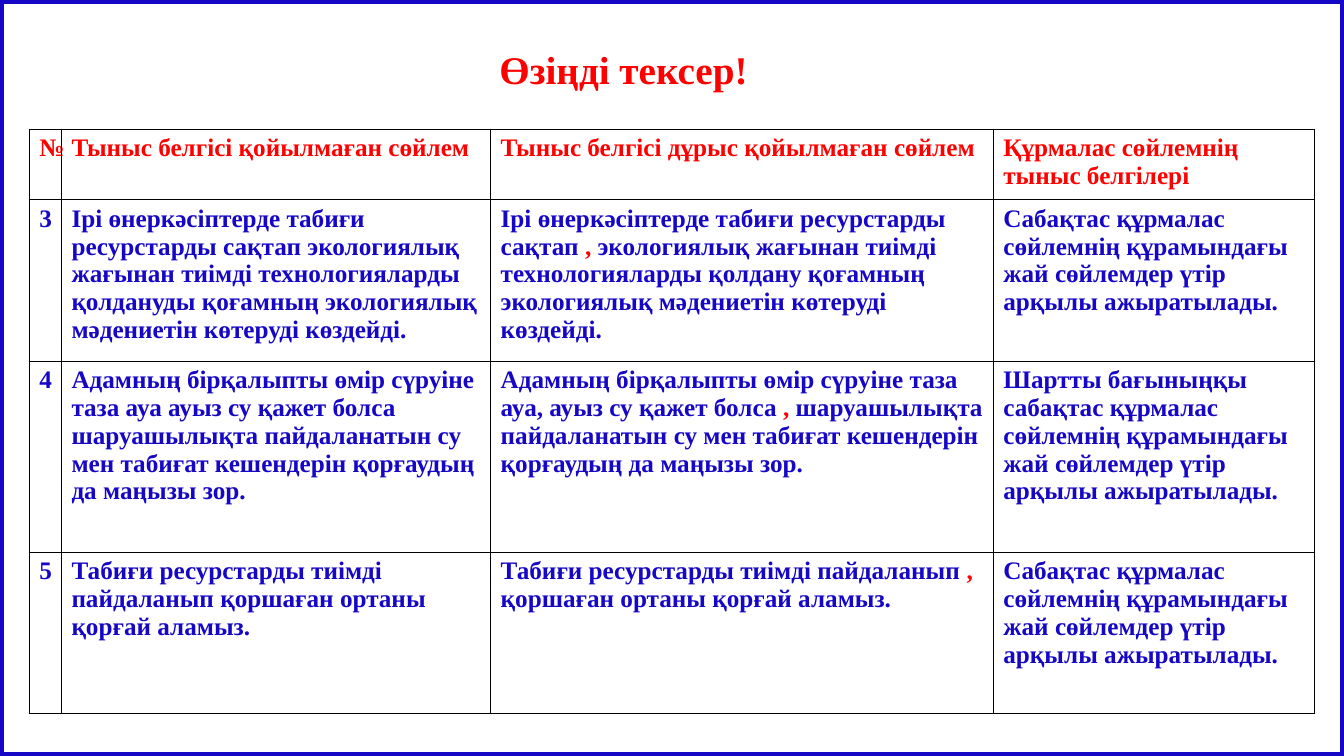
"""Builds the self-check slide with a table of punctuated sentences."""
from lxml.etree import SubElement
from pptx import Presentation
from pptx.dml.color import RGBColor
from pptx.enum.shapes import MSO_SHAPE as Shape
from pptx.enum.text import MSO_AUTO_SIZE as AutoSize, PP_ALIGN as Align
from pptx.oxml.ns import qn
from pptx.util import Inches, Pt

RED, BLUE, WHITE, BLACK = "FF0000", "1507C5", "FFFFFF", "000000"
TITLE = "Өзіңді тексер!"
COMPLEX_RULE = "Сабақтас құрмалас сөйлемнің құрамындағы жай сөйлемдер үтір арқылы ажыратылады."
HEADER = [
    "№",
    "Тыныс белгісі қойылмаған сөйлем",
    "Тыныс белгісі дұрыс қойылмаған сөйлем",
    "Құрмалас сөйлемнің тыныс белгілері",
]
SENTENCES = [
    [
        "3",
        "Ірі өнеркәсіптерде табиғи ресурстарды сақтап экологиялық жағынан тиімді "
        "технологияларды қолдануды қоғамның экологиялық мәдениетін көтеруді көздейді.",
        ("Ірі өнеркәсіптерде табиғи ресурстарды сақтап ", ", ",
         "экологиялық жағынан тиімді технологияларды қолдану қоғамның "
         "экологиялық мәдениетін көтеруді көздейді."),
        COMPLEX_RULE,
    ],
    [
        "4",
        "Адамның бірқалыпты өмір сүруіне таза ауа ауыз су қажет болса шаруашылықта "
        "пайдаланатын су мен табиғат кешендерін қорғаудың да маңызы зор.",
        ("Адамның бірқалыпты өмір сүруіне таза ауа, ауыз су қажет болса ", ", ",
         "шаруашылықта пайдаланатын су мен табиғат кешендерін қорғаудың да маңызы зор."),
        "Шартты бағыныңқы сабақтас құрмалас сөйлемнің құрамындағы жай сөйлемдер "
        "үтір арқылы ажыратылады.",
    ],
    [
        "5",
        "Табиғи ресурстарды тиімді пайдаланып қоршаған ортаны қорғай аламыз.",
        ("Табиғи ресурстарды тиімді пайдаланып ", ", ", "қоршаған ортаны қорғай аламыз."),
        COMPLEX_RULE,
    ],
]
COLUMN_WIDTHS = [0.32, 4.26, 4.99, 3.19]
ROW_HEIGHTS = [0.7, 1.6, 1.9, 1.6]
SLIDE_SIZE = (13.34, 7.5)


def color(value):
    return RGBColor.from_string(value)


def add_span(para, text, size, ink):
    span = para.add_run()
    span.text = text
    formats = {"name": "Times New Roman", "size": Pt(size), "bold": True}
    for name, value in formats.items():
        setattr(span.font, name, value)
    span.font.color.rgb = color(ink)


def add_borders(cell):
    properties = cell._tc.get_or_add_tcPr()
    for side in ("a:lnL", "a:lnR", "a:lnT", "a:lnB"):
        line = SubElement(properties, qn(side), w=str(Pt(0.45)))
        fill = SubElement(line, qn("a:solidFill"))
        SubElement(fill, qn("a:srgbClr"), val=BLACK)


def add_frame(page):
    frame = page.shapes.add_shape(Shape.RECTANGLE, 0, 0, *map(Inches, SLIDE_SIZE))
    frame.shadow.inherit = False
    frame.fill.solid()
    frame.fill.fore_color.rgb = color(WHITE)
    frame.line.color.rgb = color(BLUE)
    frame.line.width = Pt(6)


def fill_cell(cell, content, ink, align):
    add_borders(cell)
    cell.fill.background()
    para = cell.text_frame.paragraphs[0]
    para.alignment = align
    parts = (content,) if isinstance(content, str) else content
    for part in parts:
        add_span(para, part, 18, RED if part == ", " else ink)


def add_sentence_table(page):
    rows = [HEADER, *SENTENCES]
    area = map(Inches, (0.29, 1.28, sum(COLUMN_WIDTHS), sum(ROW_HEIGHTS)))
    table = page.shapes.add_table(len(rows), len(HEADER), *area).table
    for column, width in zip(table.columns, COLUMN_WIDTHS):
        column.width = Inches(width)
    for index, (row, height) in enumerate(zip(table.rows, ROW_HEIGHTS)):
        row.height = Inches(height)
        for place, (cell, content) in enumerate(zip(row.cells, rows[index])):
            ink = BLUE if index else RED
            fill_cell(cell, content, ink, Align.LEFT if place else Align.CENTER)


def add_title(page):
    box = page.shapes.add_textbox(*map(Inches, (4.86, 0.4, 2.67, 0.57)))
    box.text_frame.word_wrap = False
    box.text_frame.auto_size = AutoSize.SHAPE_TO_FIT_TEXT
    add_span(box.text_frame.paragraphs[0], TITLE, 28, RED)


def main():
    deck = Presentation()
    deck.slide_width, deck.slide_height = map(Inches, SLIDE_SIZE)
    page = deck.slides.add_slide(deck.slide_layouts[6])
    add_frame(page)
    add_sentence_table(page)
    add_title(page)
    deck.save("out.pptx")


if __name__ == "__main__":
    main()
